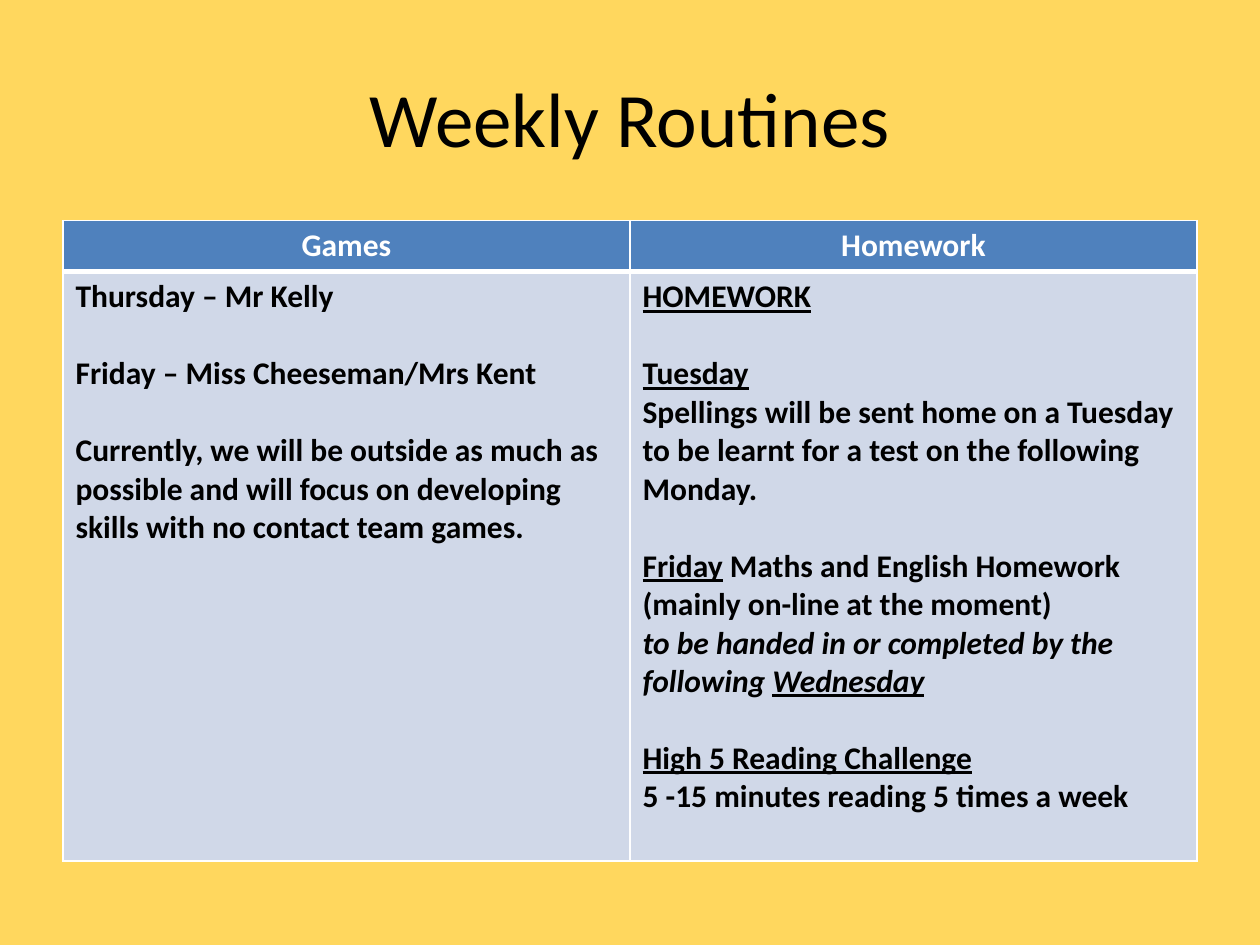
from lxml import etree
from pptx import Presentation
from pptx.dml.color import RGBColor
from pptx.enum import text
from pptx.oxml import ns
from pptx.util import Pt

FONT = "Calibri"
COLOURS = {"page": "FFD75E", "header": "4F81BD", "body": "D0D8E8", "ink": "000000", "white": "FFFFFF"}
LINE = 22
HEADINGS = ["Games", "Homework"]
GAMES = [
    (0, [("Thursday – Mr Kelly", "")]),
    (LINE, [("Friday – Miss Cheeseman/Mrs Kent", "")]),
    (LINE, [("Currently, we will be outside as much as possible and will focus on "
             "developing skills with no contact team games.", "")]),
]
HOMEWORK = [
    (0, [("HOMEWORK", "u")]),
    (LINE, [("Tuesday", "u")]),
    (0, [("Spellings will be sent home on a Tuesday to be learnt for a test on "
          "the following Monday.", "")]),
    (LINE, [("Friday", "u"), (" Maths and English Homework (mainly on-line at the moment)", "")]),
    (0, [("to be handed in or completed by the following ", "i"), ("Wednesday", "iu")]),
    (LINE, [("High 5 Reading Challenge", "u")]),
    (0, [("5 -15 minutes reading 5 times a week", "")]),
]


def colour(name):
    """Return the named colour."""
    return RGBColor.from_string(COLOURS[name])


def add_span(para, words, size, ink, bold=False, marks=""):
    """Add a formatted run; marks may hold u for underline and i for italic."""
    span = para.add_run()
    span.text = words
    font = span.font
    font.name, font.size, font.bold = FONT, Pt(size), bold
    font.color.rgb = colour(ink)
    font.underline, font.italic = "u" in marks, "i" in marks


def set_borders(cell, widths):
    """Draw white borders, with widths given for left, right, top and bottom."""
    properties = cell._tc.get_or_add_tcPr()
    for index, (side, width) in enumerate(zip("LRTB", widths)):
        line = etree.Element(ns.qn(f"a:ln{side}"), w=str(Pt(width)))
        fill = etree.SubElement(line, ns.qn("a:solidFill"))
        etree.SubElement(fill, ns.qn("a:srgbClr"), val=COLOURS["white"])
        properties.insert(index, line)


def fill_cell(cell, fill, widths, lines, ink, align):
    """Colour, border and fill one table cell with lines of text."""
    cell.fill.solid()
    cell.fill.fore_color.rgb = colour(fill)
    set_borders(cell, widths)
    frame = cell.text_frame
    for index, (gap, spans) in enumerate(lines):
        para = frame.add_paragraph() if index else frame.paragraphs[0]
        para.alignment = align
        para.space_before = Pt(gap)
        for words, marks in spans:
            add_span(para, words, 18, ink, True, marks)


def add_title(page, left, top, width, height):
    """Place the centred slide title."""
    box = page.shapes.add_textbox(Pt(left), Pt(top), Pt(width), Pt(height))
    frame = box.text_frame
    frame.word_wrap = True
    frame.vertical_anchor = text.MSO_ANCHOR.MIDDLE
    para = frame.paragraphs[0]
    para.alignment = text.PP_ALIGN.CENTER
    add_span(para, "Weekly Routines", 44, "ink")


def add_routines(page, left, top, width, height):
    """Place the table of games and homework."""
    header_height = 29.2
    table = page.shapes.add_table(2, 2, Pt(left), Pt(top), Pt(width), Pt(height)).table
    table.horz_banding = False
    table.rows[0].height = Pt(header_height)
    table.rows[1].height = Pt(height - header_height)
    for index, (heading, lines) in enumerate(zip(HEADINGS, [GAMES, HOMEWORK])):
        table.columns[index].width = Pt(width / 2)
        fill_cell(table.cell(0, index), "header", (1, 1, 1, 3), [(0, [(heading, "")])],
                  "white", text.PP_ALIGN.CENTER)
        fill_cell(table.cell(1, index), "body", (1, 1, 3, 1), lines,
                  "ink", text.PP_ALIGN.LEFT)


def main():
    """Build and save the deck."""
    deck = Presentation()
    deck.slide_width, deck.slide_height = Pt(720), Pt(540)
    page = deck.slides.add_slide(deck.slide_layouts[6])
    page.background.fill.solid()
    page.background.fill.fore_color.rgb = colour("page")
    add_title(page, 36, 21.6, 648, 90)
    add_routines(page, 36, 126, 648, 366)
    deck.save("out.pptx")


if __name__ == "__main__":
    main()
